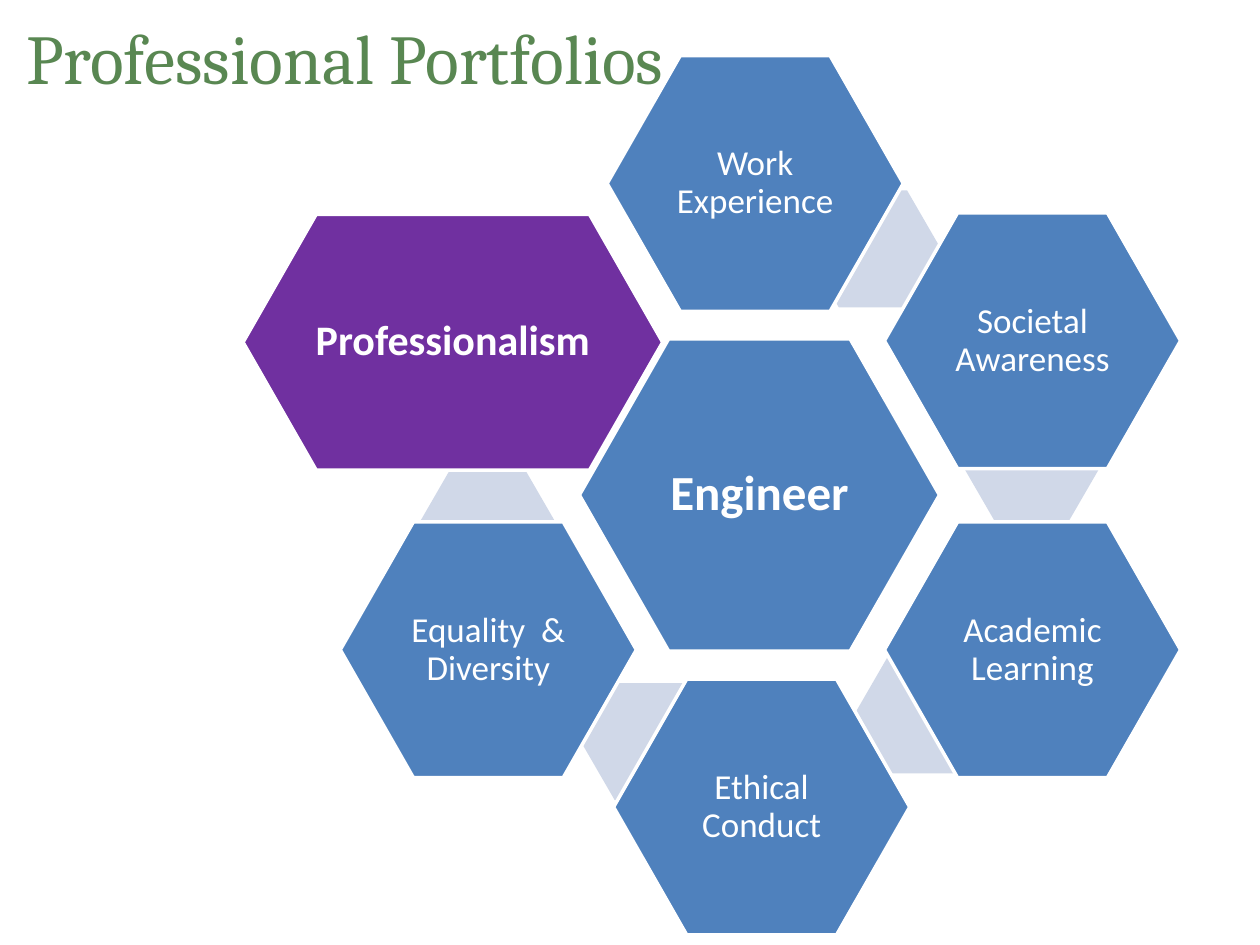
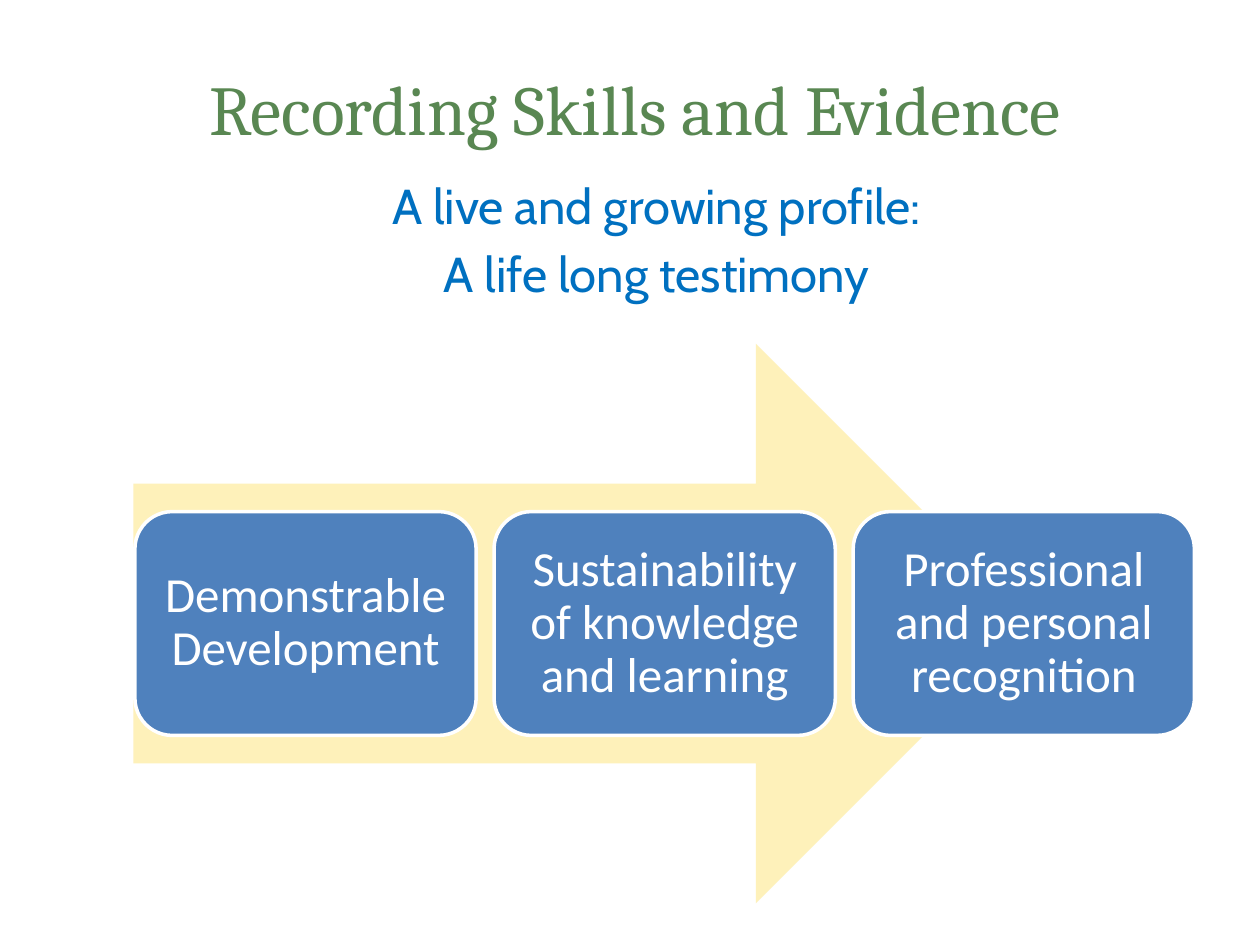
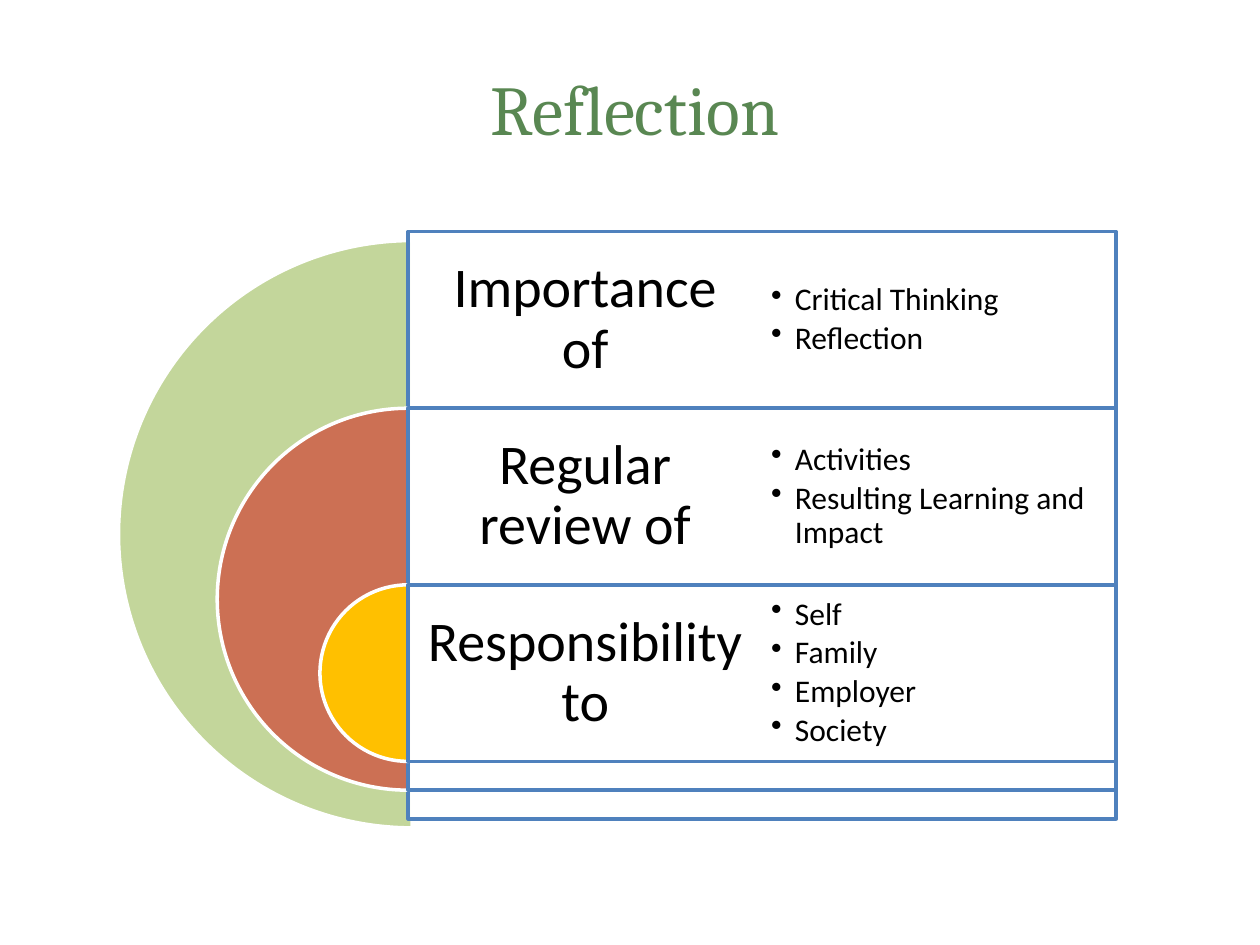
import pptx
import pptx.dml.color
import pptx.enum.shapes
import pptx.enum.text
import pptx.oxml.ns
import pptx.util
from lxml import etree

Cm = pptx.util.Cm
Pt = pptx.util.Pt
SHAPE = pptx.enum.shapes.MSO_SHAPE
ALIGN = pptx.enum.text.PP_ALIGN
ANCHOR = pptx.enum.text.MSO_ANCHOR

WHITE, BLACK = "FFFFFF", "000000"
GREEN, BLUE, TEXT_BLUE = "598752", "4F81BD", "0070C0"
PURPLE, LINK_BLUE, CREAM = "7030A0", "D0D8E8", "FEF1BA"
TITLE_ONLY, TITLE_AND_BODY = 5, 1
TITLE_BOX = (1.5, 1.32, 22.6, 2.2)
HEXAGON_ADJUST = 0.286
LINK_ADJUST = 0.289


def rgb(color):
    return pptx.dml.color.RGBColor.from_string(color)


def lengths(box):
    return [Cm(value) for value in box]


def add_part(page, kind, box, fill, line=None, adjust=()):
    """Add a flat preset shape; line is the colour of a 2 pt outline."""
    part = page.shapes.add_shape(kind, *lengths(box))
    part.shadow.inherit = False
    part.fill.solid()
    part.fill.fore_color.rgb = rgb(fill)
    if line:
        part.line.color.rgb = rgb(line)
        part.line.width = Pt(2)
    else:
        part.line.fill.background()
    for index, value in enumerate(adjust):
        part.adjustments[index] = value
    return part


def set_fill_alpha(part, percent):
    color = part.element.xpath("./p:spPr/a:solidFill/a:srgbClr")[0]
    alpha = etree.SubElement(color, pptx.oxml.ns.qn("a:alpha"))
    alpha.set("val", str(percent * 1000))


def set_indent(para, left, hanging=0, bullet=None):
    """Set the indents in cm, and the bullet character or none."""
    properties = para._p.get_or_add_pPr()
    properties.set("marL", str(Cm(left)))
    properties.set("indent", str(-Cm(hanging)))
    mark = etree.SubElement(
        properties, pptx.oxml.ns.qn("a:buChar" if bullet else "a:buNone"))
    if bullet:
        mark.set("char", bullet)


def set_frame(shape, inset=0, anchor=ANCHOR.MIDDLE):
    frame = shape.text_frame
    frame.word_wrap = True
    frame.auto_size = pptx.enum.text.MSO_AUTO_SIZE.NONE
    frame.vertical_anchor = anchor
    frame.margin_left = frame.margin_right = Cm(inset)
    frame.margin_top = frame.margin_bottom = Cm(inset)
    return frame


def set_font(para, size, color, name="Calibri", bold=False):
    para.font.size = Pt(size)
    para.font.name = name
    para.font.bold = bold
    para.font.color.rgb = rgb(color)


def write_lines(frame, lines):
    """Fill the frame with one paragraph per line and return the paragraphs."""
    frame.text = "\n".join(lines)
    return frame.paragraphs


def write_label(shape, text, size, color=WHITE, inset=0.08, bold=False):
    para = write_lines(set_frame(shape, inset), [text])[0]
    para.alignment = ALIGN.CENTER
    para.line_spacing = 0.9
    set_font(para, size, color, bold=bold)


def add_page(deck, layout, title, box=TITLE_BOX):
    page = deck.slides.add_slide(deck.slide_layouts[layout])
    holder = page.shapes.title
    holder.left, holder.top, holder.width, holder.height = lengths(box)
    para = write_lines(set_frame(holder, anchor=ANCHOR.TOP), [title])[0]
    para.alignment = ALIGN.CENTER
    para.line_spacing = Pt(48)
    set_font(para, 40, GREEN, "Cambria")
    return page


def add_engineer_ring(page, left, top):
    """Place the centre hexagon and the six linked hexagons around it."""
    link_width, link_height = 2.74, 2.36
    width, height, wide = 5.97, 5.16, 8.46
    # text, offset of the hexagon, offset of the link behind it
    ring = [
        ("Work Experience", (7.34, 0), (11.33, 2.72)),
        ("Societal Awareness", (12.93, 3.17), (14.53, 7.13)),
        ("Academic Learning", (12.93, 9.4), (12.32, 12.11)),
        ("Ethical Conduct", (7.47, 12.57), (6.81, 12.65)),
        ("Equality  & Diversity", (1.96, 9.4), (3.56, 8.23)),
    ]

    def add_hexagon(text, x, y, w, h, size, fill=BLUE, bold=False):
        hexagon = add_part(page, SHAPE.HEXAGON, (left + x, top + y, w, h),
                           fill, WHITE, [HEXAGON_ADJUST])
        write_label(hexagon, text, size, bold=bold)

    add_hexagon("Engineer", 6.78, 5.71, 7.26, 6.3, 28, bold=True)
    for text, (x, y), (link_x, link_y) in ring:
        add_part(page, SHAPE.HEXAGON,
                 (left + link_x, top + link_y, link_width, link_height),
                 LINK_BLUE, adjust=[LINK_ADJUST])
        add_hexagon(text, x, y, width, height, 20)
    add_hexagon("Professionalism", 0, 3.2, wide, height, 24, PURPLE, True)


def fill_profile_body(page, box):
    body = page.placeholders[1]
    body.left, body.top, body.width, body.height = lengths(box)
    lines = ["A live and growing profile:", "A life long testimony"]
    paras = write_lines(set_frame(body, anchor=ANCHOR.TOP), lines)
    for index, para in enumerate(paras):
        set_indent(para, 1.27)
        para.alignment = ALIGN.CENTER
        para.space_before = Pt(5.6 if index else 0)
        set_font(para, 28, TEXT_BLUE, "Cabin")


def add_arrow_cards(page, left, top, width, height):
    """Place the arrow and a row of cards along its shaft."""
    card_width, step = 6.88, 7.24
    add_part(page, SHAPE.RIGHT_ARROW, (left, top, width, height), CREAM)
    cards = ["Demonstrable Development",
             "Sustainability of knowledge and learning",
             "Professional and personal recognition"]
    for index, text in enumerate(cards):
        box = (left + 0.03 + index * step, top + 0.3 * height,
               card_width, 0.4 * height)
        card = add_part(page, SHAPE.ROUNDED_RECTANGLE, box, BLUE, WHITE)
        write_label(card, text, 28, inset=0.3)


def add_bullets(page, box, items):
    frame = set_frame(page.shapes.add_textbox(*lengths(box)), 0.18)
    for para in write_lines(frame, items):
        set_indent(para, 0.48, 0.48, "•")
        para.line_spacing = 0.9
        para.space_after = Pt(2.7)
        set_font(para, 18, BLACK)


def add_reflection_target(page, left, top, width, height):
    """Place nested half circles, each with a panel, a heading and a list."""
    row_height, shrink = 3.56, 4.14
    half = width / 2
    # heading, list, colour and offset of the half circle
    rows = [
        ("Importance of", ["Critical Thinking", "Reflection"],
         "C3D69B", (0.08, 0.18)),
        ("Regular review of", ["Activities", "Resulting Learning and Impact"],
         "CC7054", (0, 0)),
        ("Responsibility to", ["Self", "Family", "Employer", "Society"],
         "FFC000", (0, 0)),
    ]
    for index, (heading, items, color, (shift_x, shift_y)) in enumerate(rows):
        row_top = top + index * row_height
        size = height - index * shrink
        add_part(page, SHAPE.PIE,
                 (left - size / 2 + shift_x, row_top + shift_y, size, size),
                 color, WHITE, [54, 162])
        panel = add_part(page, SHAPE.RECTANGLE,
                         (left, row_top, width, size), WHITE, BLUE)
        set_fill_alpha(panel, 90)
        label = page.shapes.add_textbox(
            *lengths((left, row_top, half, row_height)))
        write_label(label, heading, 32, BLACK, inset=0.36)
        add_bullets(page, (left + half, row_top, half, row_height), items)


def main():
    deck = pptx.Presentation()
    deck.slide_width, deck.slide_height = Cm(25.4), Cm(19.05)

    page = add_page(deck, TITLE_ONLY, "Professional Portfolios",
                    (0, 0.3, 13.9, 2.2))
    add_engineer_ring(page, 4.9, 1.12)

    page = add_page(deck, TITLE_AND_BODY, "Recording Skills and Evidence")
    fill_profile_body(page, (1.09, 3.53, 23.01, 12.4))
    add_arrow_cards(page, 2.69, 6.93, 18.19, 11.28)

    page = add_page(deck, TITLE_ONLY, "Reflection")
    add_reflection_target(page, 8.23, 4.67, 14.27, 11.84)

    deck.save("out.pptx")


if __name__ == "__main__":
    main()
